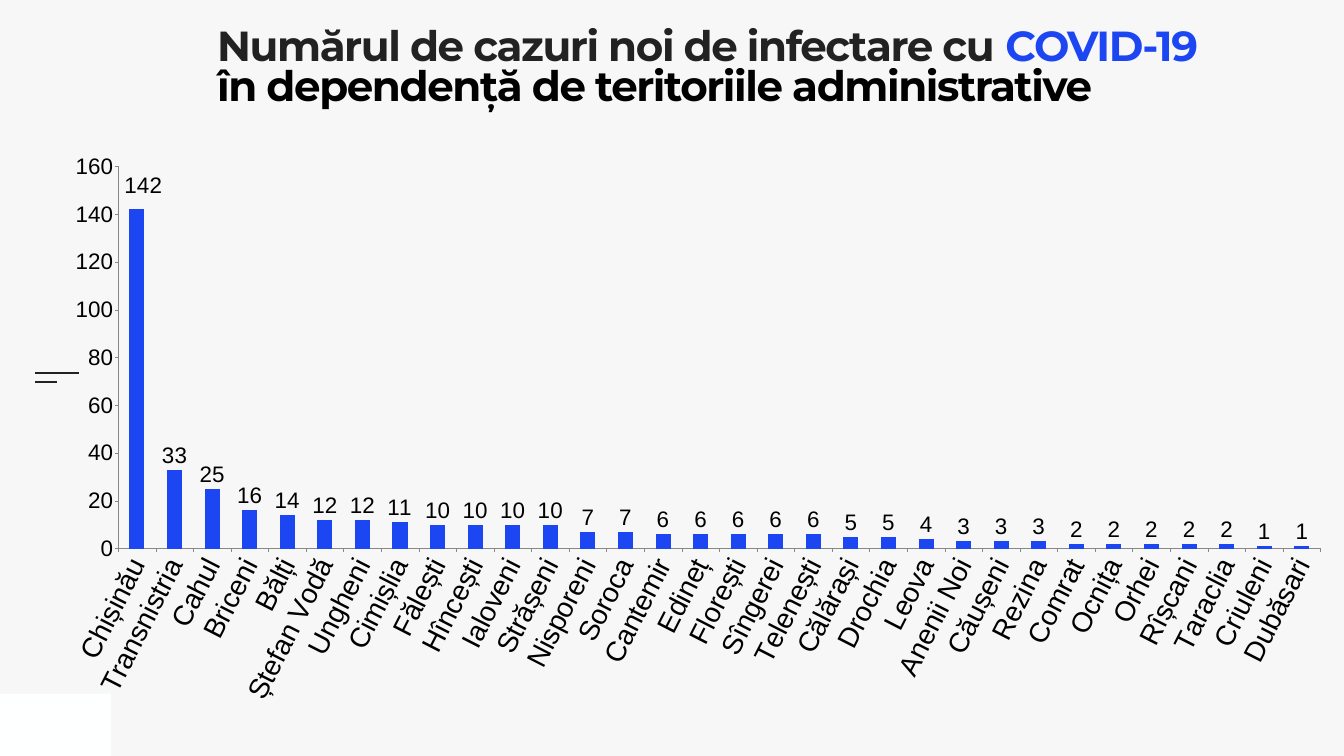
from lxml import etree
from pptx import Presentation
from pptx.chart import data as chart_data
from pptx.dml.color import RGBColor
from pptx.enum import chart as ch, shapes, text
from pptx.oxml import parse_xml, ns
from pptx.util import Pt

COLORS = {"background": "F7F7F7", "corner": "FEFFFF", "ink": "222222",
          "accent": "1D46F3", "black": "000000", "axis": "878787"}

CASES = {
    "Chișinău": 142, "Transnistria": 33, "Cahul": 25, "Briceni": 16,
    "Bălți": 14, "Ștefan Vodă": 12, "Ungheni": 12, "Cimișlia": 11,
    "Fălești": 10, "Hîncești": 10, "Ialoveni": 10, "Strășeni": 10,
    "Nisporeni": 7, "Soroca": 7, "Cantemir": 6, "Edineț": 6,
    "Florești": 6, "Sîngerei": 6, "Telenești": 6, "Călărași": 5,
    "Drochia": 5, "Leova": 4, "Anenii Noi": 3, "Căușeni": 3,
    "Rezina": 3, "Comrat": 2, "Ocnița": 2, "Orhei": 2,
    "Rîșcani": 2, "Taraclia": 2, "Criuleni": 1, "Dubăsari": 1,
}

TITLE_LINES = [
    [("Numărul de cazuri noi de infectare cu ", "ink"), ("COVID-19", "accent")],
    [("în dependență de teritoriile administrative", "black")],
]

NAME_ANGLE = -63  # degrees


def rgb(name):
    return RGBColor.from_string(COLORS[name])


def set_font(font, size, color, face="Arial"):
    font.size, font.name, font.color.rgb = Pt(size), face, rgb(color)


def add_corner(slide, left, top, width, height):
    corner = slide.shapes.add_shape(shapes.MSO_SHAPE.RECTANGLE,
                                    Pt(left), Pt(top), Pt(width), Pt(height))
    corner.shadow.inherit = False
    corner.fill.solid()
    corner.fill.fore_color.rgb = rgb("corner")
    corner.line.fill.background()


def add_menu_mark(slide, left, top, width, gap):
    """Two stacked strokes, the lower one half as long."""
    for row, length in enumerate((width, width / 2)):
        y = Pt(top + row * gap)
        stroke = slide.shapes.add_connector(shapes.MSO_CONNECTOR.STRAIGHT,
                                            Pt(left), y, Pt(left + length), y)
        stroke.line.color.rgb = rgb("ink")
        stroke.line.width = Pt(3)
        etree.SubElement(stroke._element.spPr, ns.qn("a:effectLst"))


def fill_title(slide, left, top, width, height):
    title = slide.shapes.title
    title.left, title.top, title.width, title.height = map(Pt, (left, top, width, height))
    frame = title.text_frame
    frame.margin_left = frame.margin_right = frame.margin_top = frame.margin_bottom = 0
    frame.word_wrap = True
    frame.auto_size = text.MSO_AUTO_SIZE.NONE
    frame.vertical_anchor = text.MSO_ANCHOR.TOP
    for index, line in enumerate(TITLE_LINES):
        paragraph = frame.add_paragraph() if index else frame.paragraphs[0]
        paragraph.alignment = text.PP_ALIGN.LEFT
        paragraph.line_spacing = 0.8
        paragraph.space_before = Pt(0)
        for words, color in line:
            run = paragraph.add_run()
            run.text = words
            set_font(run.font, 60, color, "Montserrat")
            run.font.bold = True
            run.font._element.set("spc", "-200")


def manual_layout(x, y, w=None, h=None):
    """Layout element: an inner plot box, or an offset if no size is given."""
    parts = [("x", x), ("y", y)]
    if w is not None:
        parts = [("layoutTarget", "inner"), ("xMode", "edge"), ("yMode", "edge"),
                 *parts, ("w", w), ("h", h)]
    inner = "".join(f'<c:{tag} val="{val}"/>' for tag, val in parts)
    return parse_xml(f'<c:layout {ns.nsdecls("c")}><c:manualLayout>{inner}'
                     '</c:manualLayout></c:layout>')


def style_axis(axis, size):
    axis.has_major_gridlines = False
    axis.major_tick_mark = ch.XL_TICK_MARK.OUTSIDE
    axis.minor_tick_mark = ch.XL_TICK_MARK.NONE
    axis.format.line.color.rgb = rgb("axis")
    axis.format.line.width = Pt(0.75)
    set_font(axis.tick_labels.font, size, "black")


def add_cases_chart(slide, left, top, width, height):
    cases = chart_data.CategoryChartData()
    cases.categories = list(CASES)
    cases.add_series("Series 1", list(CASES.values()))
    chart = slide.shapes.add_chart(ch.XL_CHART_TYPE.COLUMN_CLUSTERED, Pt(left), Pt(top),
                                   Pt(width), Pt(height), cases).chart
    chart.has_title = chart.has_legend = False
    set_font(chart.font, 40, "black")

    style_axis(chart.category_axis, 40)
    name_body = chart.category_axis._element.find(f".//{ns.qn('a:bodyPr')}")
    name_body.set("rot", str(NAME_ANGLE * 60000))
    name_body.set("vert", "horz")
    style_axis(chart.value_axis, 32)
    chart.value_axis.minimum_scale = 0
    chart.value_axis.maximum_scale = 160
    chart.value_axis.major_unit = 20

    plot = chart.plots[0]
    plot.gap_width = 150
    plot.vary_by_categories = False
    bars = plot.series[0]
    bars.format.fill.solid()
    bars.format.fill.fore_color.rgb = rgb("accent")
    labels = bars.data_labels
    labels.show_value = True
    labels.position = ch.XL_LABEL_POSITION.OUTSIDE_END
    set_font(labels.font, 32, "black")

    highest = bars.points[0].data_label
    highest.position = ch.XL_LABEL_POSITION.OUTSIDE_END
    set_font(highest.font, 32, "black")
    bars._element.find(f".//{ns.qn('c:dLbl')}/{ns.qn('c:idx')}").addnext(
        manual_layout(0.005, -0.015))

    plot_area = chart._chartSpace.chart.plotArea
    for old in plot_area.findall(ns.qn("c:layout")):
        plot_area.remove(old)
    plot_area.insert(0, manual_layout(0.0495, 0.0525, 0.948, 0.64))


def main():
    deck = Presentation()
    deck.slide_width, deck.slide_height = Pt(1920.24), Pt(1080)
    slide = deck.slides.add_slide(deck.slide_layouts[5])
    slide.background.fill.solid()
    slide.background.fill.fore_color.rgb = rgb("background")
    add_corner(slide, 0, 991, 158.4, 89)
    add_menu_mark(slide, 49.7, 533.5, 63.4, 12.5)
    fill_title(slide, 310.3, 41.8, 1441.4, 196.6)
    add_cases_chart(slide, 79.2, 193, 1812.2, 853.2)
    deck.save("out.pptx")


if __name__ == "__main__":
    main()
